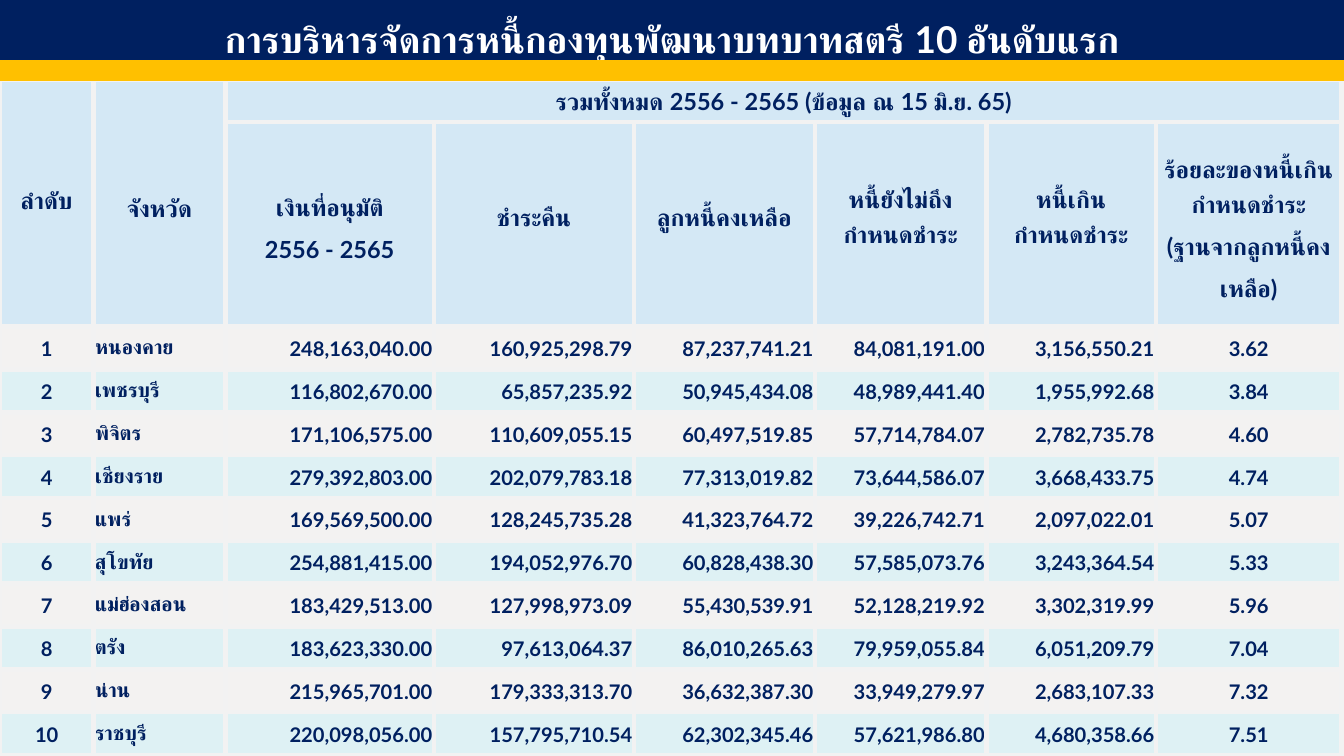
from lxml import etree
from pptx import Presentation
from pptx import util as u
from pptx.dml.color import RGBColor
from pptx.enum import shapes, text
from pptx.oxml.ns import qn

HEX = {"paper": "FEF9F1", "navy": "002060", "gold": "FFC000", "white": "FFFFFF",
       "head": "CAE4F6", "band": "D7EFF5", "grey": "F2F2F2"}
MID, LEFT, RIGHT = text.PP_ALIGN.CENTER, text.PP_ALIGN.LEFT, text.PP_ALIGN.RIGHT
COLS = [1.96, 2.78, 4.37, 4.2, 3.8, 3.6, 3.56, 3.9]
ROWS = [0.88, 4.3] + [0.9] * 10
ALIGN = [MID, LEFT] + [RIGHT] * 5 + [MID]
TITLE = "การบริหารจัดการหนี้กองทุนพัฒนาบทบาทสตรี 10 อันดับแรก"
HEADS = [
    (0, 0, "ลำดับ", 1.5, 0.3),
    (0, 1, "จังหวัด", 1.5, 0),
    (0, 2, "รวมทั้งหมด 2556 - 2565 (ข้อมูล ณ 15 มิ.ย. 65)", 1, 0),
    (1, 2, "เงินที่อนุมัติ\n2556 - 2565", 1.5, 0),
    (1, 3, "ชำระคืน", 1.5, 0.5),
    (1, 4, "ลูกหนี้คงเหลือ", 1.5, 0.5),
    (1, 5, "หนี้ยังไม่ถึง\nกำหนดชำระ", 1.5, 0.5),
    (1, 6, "หนี้เกิน\nกำหนดชำระ", 1.5, 0.5),
    (1, 7, "ร้อยละของหนี้เกิน\nกำหนดชำระ\n(ฐานจากลูกหนี้คงเหลือ)", 1.5, 0),
]
DEBTS = [
    ("หนองคาย", "248,163,040.00", "160,925,298.79", "87,237,741.21", "84,081,191.00", "3,156,550.21", "3.62"),
    ("เพชรบุรี", "116,802,670.00", "65,857,235.92", "50,945,434.08", "48,989,441.40", "1,955,992.68", "3.84"),
    ("พิจิตร", "171,106,575.00", "110,609,055.15", "60,497,519.85", "57,714,784.07", "2,782,735.78", "4.60"),
    ("เชียงราย", "279,392,803.00", "202,079,783.18", "77,313,019.82", "73,644,586.07", "3,668,433.75", "4.74"),
    ("แพร่", "169,569,500.00", "128,245,735.28", "41,323,764.72", "39,226,742.71", "2,097,022.01", "5.07"),
    ("สุโขทัย", "254,881,415.00", "194,052,976.70", "60,828,438.30", "57,585,073.76", "3,243,364.54", "5.33"),
    ("แม่ฮ่องสอน", "183,429,513.00", "127,998,973.09", "55,430,539.91", "52,128,219.92", "3,302,319.99", "5.96"),
    ("ตรัง", "183,623,330.00", "97,613,064.37", "86,010,265.63", "79,959,055.84", "6,051,209.79", "7.04"),
    ("น่าน", "215,965,701.00", "179,333,313.70", "36,632,387.30", "33,949,279.97", "2,683,107.33", "7.32"),
    ("ราชบุรี", "220,098,056.00", "157,795,710.54", "62,302,345.46", "57,621,986.80", "4,680,358.66", "7.51"),
]


def tint(name):
    """Return the colour of a given name."""
    return RGBColor.from_string(HEX[name])


def assign(item, **values):
    """Set each value on the item."""
    for key, value in values.items():
        setattr(item, key, value)


def write(frame, words, size, color, align, pitch):
    """Write one paragraph per line of words."""
    frame.text = words
    for para in frame.paragraphs:
        assign(para, alignment=align, line_spacing=float(pitch))
        for run in para.runs:
            assign(run.font, name="Lato", size=u.Pt(size), bold=True)
            run.font.color.rgb = tint(color)


def paint(cell, color, alpha):
    """Give a cell its borders, fill and margins."""
    assign(cell, margin_left=u.Cm(0.03), margin_right=u.Cm(0.03), margin_top=u.Cm(0.03),
           margin_bottom=0, vertical_anchor=text.MSO_ANCHOR.MIDDLE)
    cell.fill.solid()
    cell.fill.fore_color.rgb = tint(color)
    props = cell._tc.get_or_add_tcPr()
    shade = props.find(".//" + qn("a:srgbClr"))
    etree.SubElement(shade, qn("a:alpha"), val=str(alpha * 1000))
    for place, side in enumerate(("lnL", "lnR", "lnT", "lnB")):
        line = etree.Element(qn("a:" + side), w=str(u.Pt(3)))
        solid = etree.SubElement(line, qn("a:solidFill"))
        etree.SubElement(solid, qn("a:srgbClr"), val=HEX["grey"])
        props.insert(place, line)


def bar(slide, box, color):
    """Draw a plain bar in the box."""
    shape = slide.shapes.add_shape(shapes.MSO_SHAPE.RECTANGLE, *map(u.Cm, box))
    shape.shadow.inherit = False
    shape.fill.solid()
    shape.fill.fore_color.rgb = tint(color)
    shape.line.color.rgb = tint(color)
    shape.line.width = u.Pt(1)
    return shape


def banner(slide, box):
    """Draw the title bar with the gold strip under it."""
    left, top, width, height = box
    strip = 0.4
    title = bar(slide, (left, top, width, height - strip), "navy")
    assign(title.text_frame, word_wrap=True, vertical_anchor=text.MSO_ANCHOR.TOP)
    write(title.text_frame, TITLE, 22, "white", MID, 1.3)
    bar(slide, (left, top + height - strip, width, strip), "gold")


def grid(slide, box):
    """Draw the debt table in the box."""
    frame = slide.shapes.add_table(len(ROWS), len(COLS), *map(u.Cm, box))
    table = frame.table
    assign(table, first_row=False, horz_banding=False)
    for col, width in zip(table.columns, COLS):
        col.width = u.Cm(width)
    for index, (row, height) in enumerate(zip(table.rows, ROWS)):
        row.height = u.Cm(height)
        look = ("head", 80) if index < 2 else (("grey", 90), ("band", 80))[index % 2]
        for cell in row.cells:
            paint(cell, *look)
    for start, end in (((0, 0), (1, 0)), ((0, 1), (1, 1)), ((0, 2), (0, 7))):
        table.cell(*start).merge(table.cell(*end))
    for row, col, words, pitch, below in HEADS:
        cell = table.cell(row, col)
        cell.margin_bottom = u.Cm(below)
        write(cell.text_frame, words, 14, "navy", MID, pitch)
    for rank, debt in enumerate(DEBTS, 1):
        for col, words in enumerate((str(rank), *debt)):
            write(table.cell(rank + 1, col).text_frame, words, 12, "navy", ALIGN[col], 1)


def main():
    """Build and save the slide."""
    deck = Presentation()
    assign(deck, slide_width=u.Cm(28.22), slide_height=u.Cm(15.88))
    slide = deck.slides.add_slide(deck.slide_layouts[6])
    slide.background.fill.solid()
    slide.background.fill.fore_color.rgb = tint("paper")
    grid(slide, (0, 1.68, sum(COLS), sum(ROWS)))
    banner(slide, (0, -0.05, 28.22, 1.73))
    deck.save("out.pptx")


if __name__ == "__main__":
    main()
